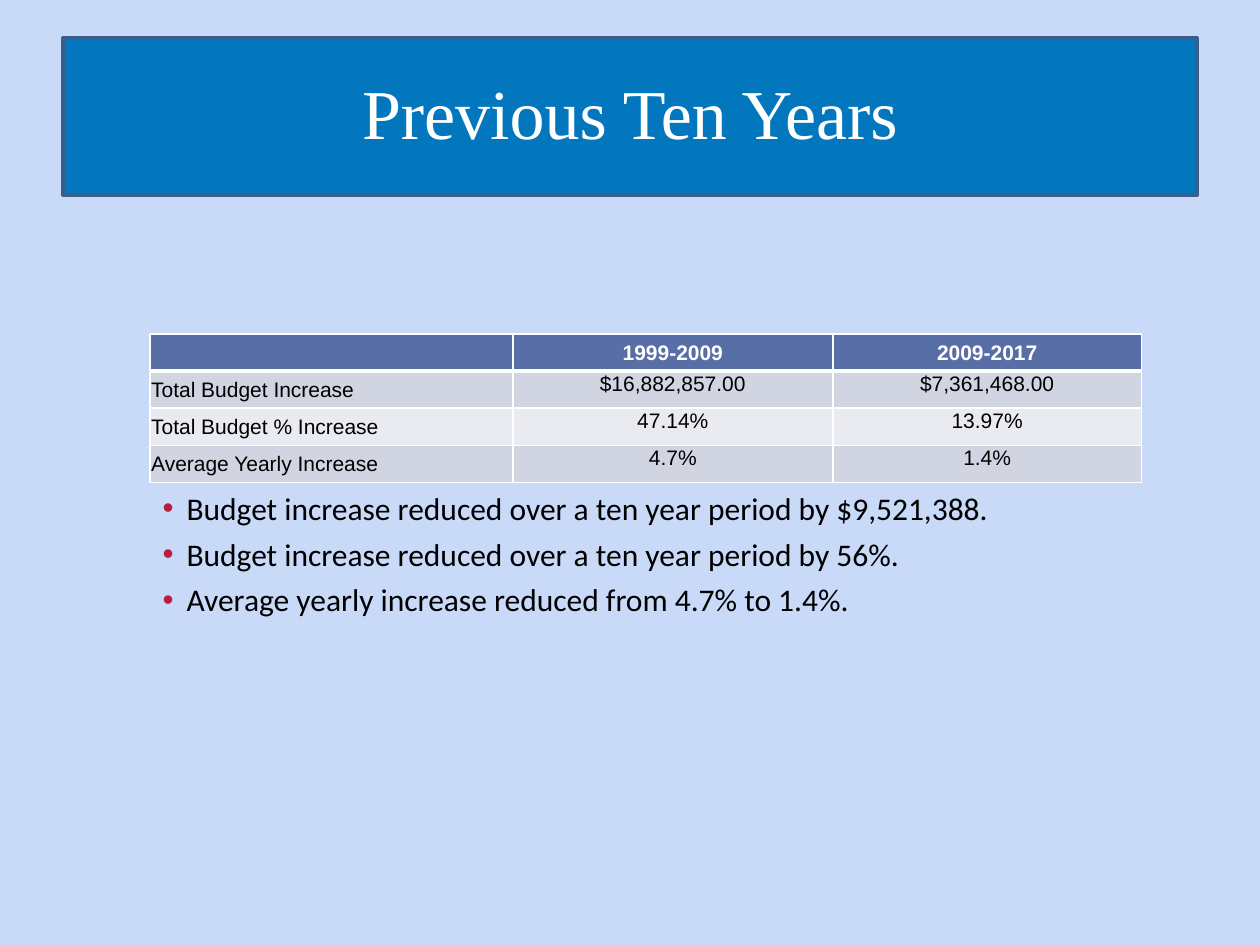
from lxml import etree
from pptx import Presentation
from pptx import util as u
from pptx.dml.color import RGBColor
from pptx.enum import text
from pptx.oxml.ns import qn

COLORS = {
    "background": "C9DAF8",
    "banner": "0277BD",
    "banner_line": "395E89",
    "header": "586EA6",
    "odd_row": "D1D5E1",
    "even_row": "EAEBF1",
    "bullet": "B71E42",
    "white": "FFFFFF",
    "black": "000000",
}
BULLETS = [
    "Budget increase reduced over a ten year period by $9,521,388.",
    "Budget increase reduced over a ten year period by 56%.",
    "Average yearly increase reduced from 4.7% to 1.4%.",
]
BUDGET_ROWS = [
    ["", "1999-2009", "2009-2017"],
    ["Total Budget Increase", "$16,882,857.00", "$7,361,468.00"],
    ["Total Budget % Increase", "47.14%", "13.97%"],
    ["Average Yearly Increase", "4.7%", "1.4%"],
]
COLUMN_WIDTHS = [2.88, 2.54, 2.45]
LEFT, WIDTH = 1.19, 7.88
TABLE_TOP, TABLE_HEIGHT = 2.65, 1.18


def rgb(name):
    return RGBColor.from_string(COLORS[name])


def set_fill(item, color):
    item.fill.solid()
    item.fill.fore_color.rgb = rgb(color)


def set_all(item, values):
    for name, value in values.items():
        setattr(item, name, value)


def place(shape, left, top, width, height):
    box = {"left": left, "top": top, "width": width, "height": height}
    set_all(shape, {name: u.Inches(value) for name, value in box.items()})


def add_span(para, words, color, **font):
    span = para.add_run()
    span.text = words
    set_all(span.font, font)
    span.font.color.rgb = rgb(color)


def add_title(slide, words):
    title = slide.shapes.title
    place(title, 0.5, 0.3, 9, 1.25)
    set_fill(title, "banner")
    title.line.color.rgb = rgb("banner_line")
    title.line.width = u.Pt(2)
    set_all(title.text_frame, {
        "auto_size": text.MSO_AUTO_SIZE.NONE,
        "vertical_anchor": text.MSO_ANCHOR.MIDDLE,
    })
    para = title.text_frame.paragraphs[0]
    set_all(para, {"alignment": text.PP_ALIGN.CENTER, "line_spacing": 0.9})
    add_span(para, words, "white", name="Times New Roman", size=u.Pt(40))


def add_bullet(para):
    props = para._p.get_or_add_pPr()
    indent = u.Inches(0.19)
    props.set("marL", str(indent))
    props.set("indent", str(-indent))
    color = etree.SubElement(props, qn("a:buClr"))
    etree.SubElement(color, qn("a:srgbClr"), val=COLORS["bullet"])
    etree.SubElement(props, qn("a:buFont"), typeface="Arial")
    etree.SubElement(props, qn("a:buChar"), char="•")


def add_bullets(slide, lines):
    body = slide.placeholders[1]
    place(body, LEFT, TABLE_TOP + TABLE_HEIGHT, WIDTH, 2.13)
    frame = body.text_frame
    frame.auto_size = text.MSO_AUTO_SIZE.NONE
    for index, line in enumerate(lines):
        para = frame.add_paragraph() if index else frame.paragraphs[0]
        add_bullet(para)
        para.space_before = u.Pt(4.5 if index else 0)
        add_span(para, line, "black", name="Calibri", size=u.Pt(18))


def set_borders(cell, widths):
    """Draw white borders; widths maps L, R, T and B to points."""
    props = cell._tc.get_or_add_tcPr()
    for index, (side, width) in enumerate(widths.items()):
        line = etree.Element(qn(f"a:ln{side}"), w=str(u.Pt(width)))
        fill = etree.SubElement(line, qn("a:solidFill"))
        etree.SubElement(fill, qn("a:srgbClr"), val=COLORS["white"])
        props.insert(index, line)


def format_cell(cell, words, row, column):
    is_header = row == 0
    edge = u.Inches(0.01)
    middle = is_header or column == 0
    set_all(cell, {
        "margin_left": edge, "margin_right": edge,
        "margin_top": edge, "margin_bottom": 0,
        "vertical_anchor": text.MSO_ANCHOR.MIDDLE if middle else text.MSO_ANCHOR.TOP,
    })
    set_fill(cell, "header" if is_header else "odd_row" if row % 2 else "even_row")
    set_borders(cell, {"L": 1, "R": 1, "T": 3 if row == 1 else 1, "B": 3 if is_header else 1})
    para = cell.text_frame.paragraphs[0]
    para.alignment = text.PP_ALIGN.CENTER if column else text.PP_ALIGN.LEFT
    if words:
        add_span(para, words, "white" if is_header else "black",
                 name="Arial", size=u.Pt(12), bold=is_header)
    else:
        etree.SubElement(para._p, qn("a:endParaRPr"), sz="1200")


def add_budget_table(slide, rows):
    frame = slide.shapes.add_table(
        len(rows), len(COLUMN_WIDTHS), u.Inches(LEFT), u.Inches(TABLE_TOP),
        u.Inches(WIDTH), u.Inches(TABLE_HEIGHT))
    table = frame.table
    for column, width in zip(table.columns, COLUMN_WIDTHS):
        column.width = u.Inches(width)
    for row, values in enumerate(rows):
        for column, words in enumerate(values):
            format_cell(table.cell(row, column), words, row, column)


def main():
    deck = Presentation()
    deck.slide_width, deck.slide_height = u.Inches(10), u.Inches(7.5)
    slide = deck.slides.add_slide(deck.slide_layouts[1])
    set_fill(slide.background, "background")
    add_title(slide, "Previous Ten Years")
    add_bullets(slide, BULLETS)
    add_budget_table(slide, BUDGET_ROWS)
    deck.save("out.pptx")


if __name__ == "__main__":
    main()
